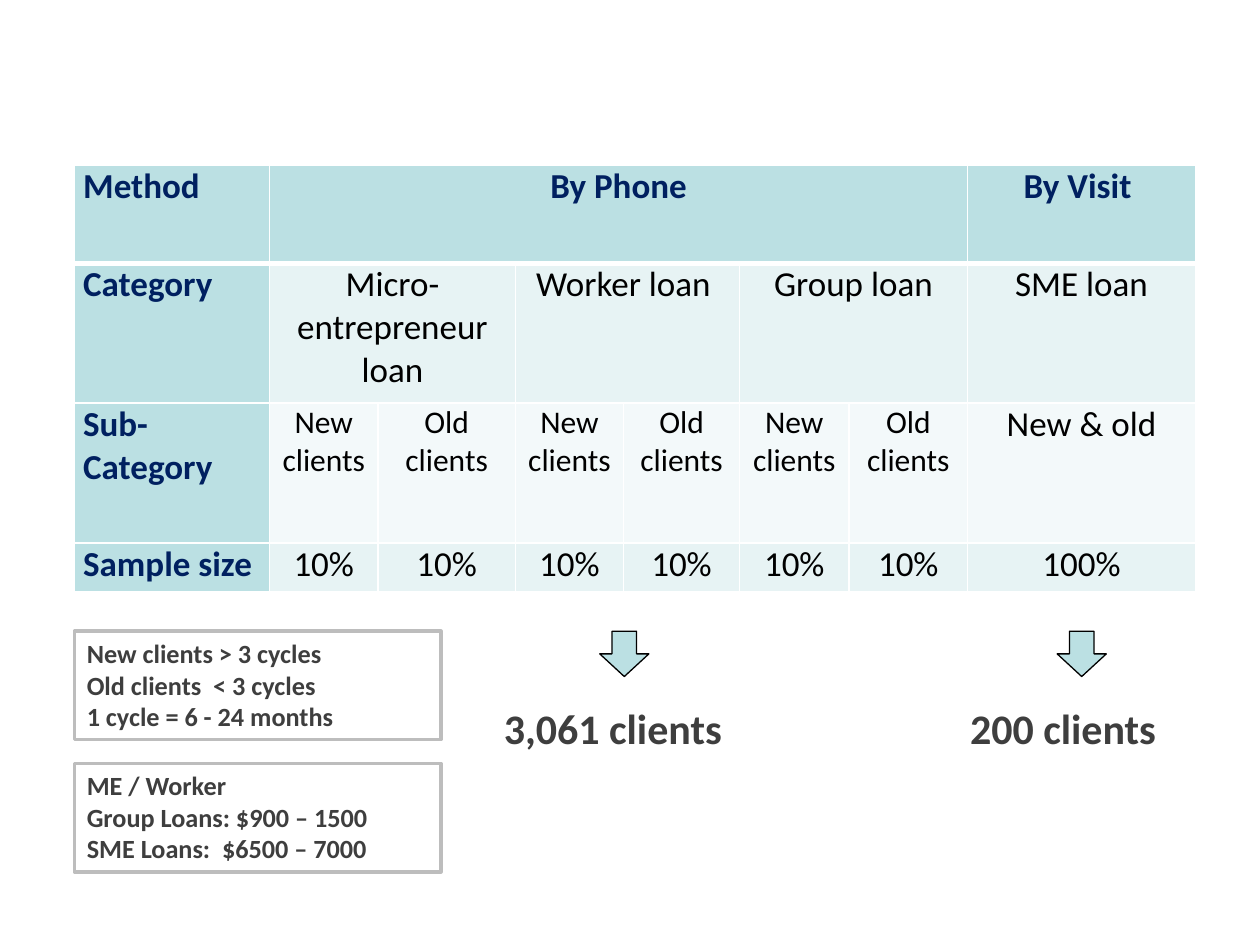
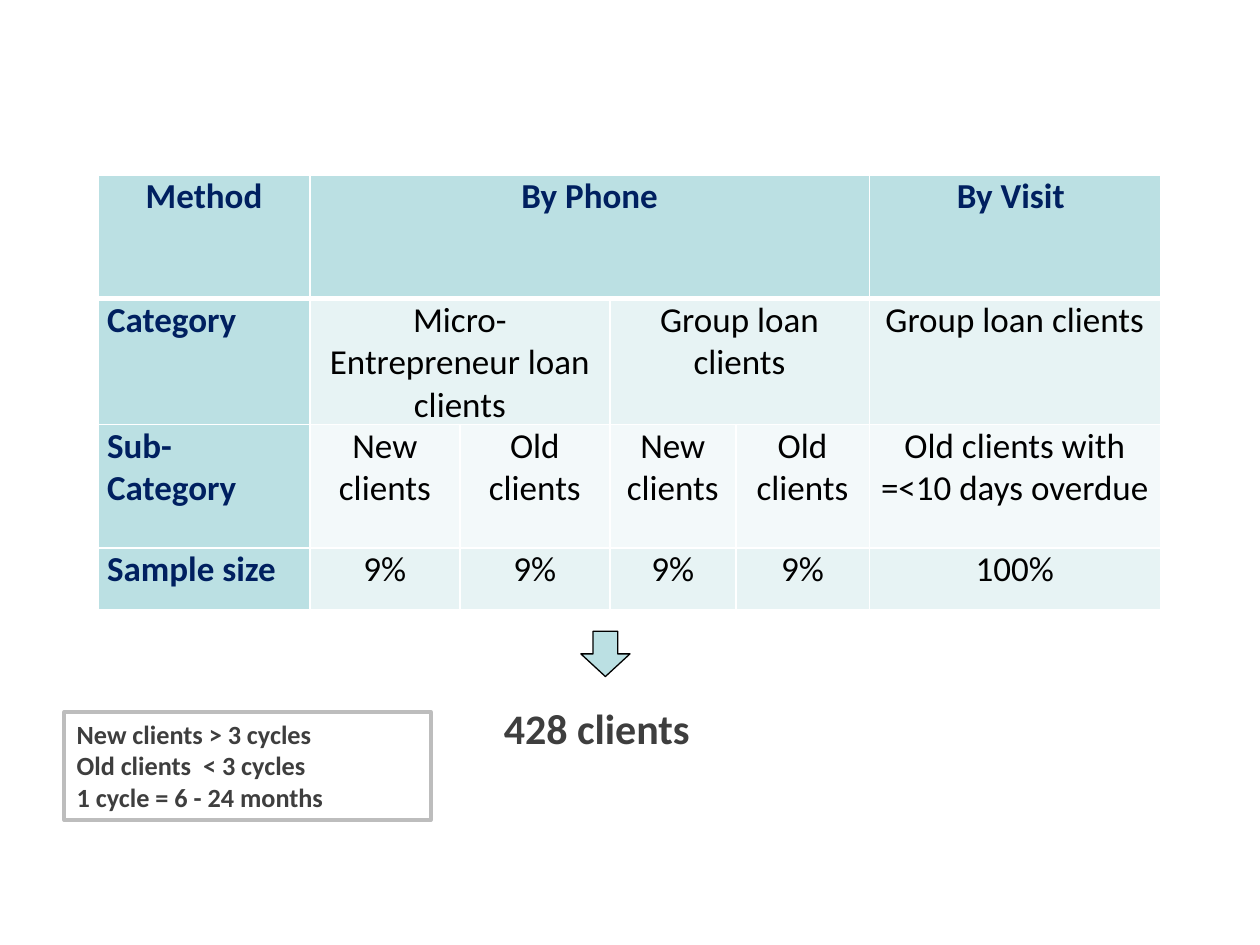
from dataclasses import dataclass

from lxml import etree
from pptx import Presentation
from pptx.dml.color import RGBColor
from pptx.enum.shapes import MSO_SHAPE
from pptx.enum.text import MSO_ANCHOR, MSO_AUTO_SIZE, PP_ALIGN
from pptx.oxml.ns import qn
from pptx.util import Inches, Pt

RECTANGLE, DOWN_ARROW = MSO_SHAPE.RECTANGLE, MSO_SHAPE.DOWN_ARROW
LEFT, CENTER = PP_ALIGN.LEFT, PP_ALIGN.CENTER
TOP = MSO_ANCHOR.TOP
GROW = MSO_AUTO_SIZE.SHAPE_TO_FIT_TEXT

# Shared colours and font formats
WHITE = RGBColor(0xFF, 0xFF, 0xFF)
BLACK = RGBColor(0, 0, 0)
NAVY = RGBColor(0x00, 0x20, 0x60)
AQUA = RGBColor(0xBB, 0xE0, 0xE3)
PALE_AQUA = RGBColor(0xE7, 0xF3, 0xF4)
FAINT_AQUA = RGBColor(0xF3, 0xF9, 0xFA)
DARK_GRAY = RGBColor(0x3E, 0x3E, 0x3E)
BORDER_GRAY = RGBColor(0xBD, 0xBD, 0xBD)

FONT = "Calibri"
HEADING = {"name": FONT, "size": Pt(20), "bold": True, "color": NAVY}
BODY = {"name": FONT, "size": Pt(20), "bold": False, "color": BLACK}
SMALL_BODY = BODY | {"size": Pt(18)}
NOTE = {"name": FONT, "size": Pt(15), "bold": True, "color": DARK_GRAY}
TOTAL = NOTE | {"size": Pt(24)}

CELL_MARGINS = {"margin_left": Inches(0.07), "margin_right": Inches(0.07),
                "margin_top": 0, "margin_bottom": 0, "vertical_anchor": TOP}
ROW_FILLS = (AQUA, PALE_AQUA, FAINT_AQUA, PALE_AQUA)
ARROW_TOP, TOTAL_TOP = 5.01, 5.53

CYCLE_LINES = ("New clients > 3 cycles", "Old clients  < 3 cycles", "1 cycle = 6 - 24 months")
LOAN_LINES = ("ME / Worker", "Group Loans: $900 – 1500", "SME Loans:  $6500 – 7000")


@dataclass(frozen=True)
class Entry:
    text: str
    span: int = 1
    style: dict | None = None


@dataclass(frozen=True)
class SampleTable:
    left: float
    top: float
    columns: tuple[float, ...]
    rows: tuple[float, ...]
    entries: tuple[tuple[Entry, ...], ...]
    method_alignment: PP_ALIGN


@dataclass(frozen=True)
class Total:
    text: str
    left: float
    width: float
    arrow_left: float
    wrap: bool = True


@dataclass(frozen=True)
class Note:
    left: float
    top: float
    lines: tuple[str, ...]


@dataclass(frozen=True)
class SampleSlide:
    table: SampleTable
    totals: tuple[Total, ...]
    notes: tuple[Note, ...]


def client_pairs(count: int, style: dict) -> tuple[Entry, ...]:
    return (Entry("New clients", style=style), Entry("Old clients", style=style)) * count


PHONE_AND_VISIT = SampleTable(
    0.59, 1.31, (1.55, 0.86, 1.09, 0.86, 0.92, 0.87, 0.94, 1.81), (0.78, 1.11, 1.11, 0.39),
    (
        (Entry("Method"), Entry("By Phone", 6), Entry("By Visit ")),
        (Entry("Category"), Entry("Micro-entrepreneur loan", 2), Entry("Worker loan ", 2),
         Entry("Group loan", 2), Entry("SME loan")),
        (Entry("Sub-Category"), *client_pairs(3, SMALL_BODY), Entry("New & old")),
        (Entry("Sample size"), *(Entry("10%"),) * 6, Entry("100%")),
    ), LEFT)

OVERDUE_VISITS = SampleTable(
    0.78, 1.39, (1.68, 1.19, 1.19, 1, 1.06, 2.31), (0.98, 1, 0.98, 0.49),
    (
        (Entry("Method"), Entry("By Phone", 4), Entry("By Visit ")),
        (Entry("Category"), Entry("Micro-Entrepreneur loan clients", 2),
         Entry("Group loan clients", 2), Entry("Group loan clients")),
        (Entry("Sub-Category"), *client_pairs(2, BODY), Entry("Old clients with =<10 days overdue")),
        (Entry("Sample size"), *(Entry("9%"),) * 4, Entry("100%")),
    ), CENTER)

SLIDES = (
    SampleSlide(PHONE_AND_VISIT,
                (Total("3,061 clients", 3.9, 2.28, 4.76),
                 Total("200 clients", 7.6, 1.92, 8.39, wrap=False)),
                (Note(0.59, 5.01, CYCLE_LINES), Note(0.59, 6.06, LOAN_LINES))),
    SampleSlide(OVERDUE_VISITS,
                (Total("428 clients", 3.9, 2.28, 4.61),),
                (Note(0.51, 5.65, CYCLE_LINES),)),
)


def write_text(text_frame, lines: tuple[str, ...], style: dict, alignment: PP_ALIGN) -> None:
    for index, line in enumerate(lines):
        paragraph = text_frame.paragraphs[0] if index == 0 else text_frame.add_paragraph()
        paragraph.alignment = alignment
        run = paragraph.add_run()
        run.text = line
        for name, value in style.items():
            if name == "color":
                run.font.color.rgb = value
            else:
                setattr(run.font, name, value)


def set_borders(cell, row: int) -> None:
    """White grid lines, thicker below the header row."""
    properties = cell._tc.get_or_add_tcPr()
    widths = {"lnL": 1, "lnR": 1, "lnT": 3 if row == 1 else 1, "lnB": 3 if row == 0 else 1}
    for tag, width in widths.items():
        line = etree.SubElement(properties, qn(f"a:{tag}"), w=str(Pt(width)))
        fill = etree.SubElement(line, qn("a:solidFill"))
        etree.SubElement(fill, qn("a:srgbClr"), val=str(WHITE))


def add_sample_table(slide, table_data: SampleTable) -> None:
    columns, rows = table_data.columns, table_data.rows
    table = slide.shapes.add_table(
        len(rows), len(columns), Inches(table_data.left), Inches(table_data.top),
        Inches(sum(columns)), Inches(sum(rows))).table
    table.first_row = table.horz_banding = False
    for column, width in zip(table.columns, columns):
        column.width = Inches(width)
    for row, height in zip(table.rows, rows):
        row.height = Inches(height)

    # Every grid cell gets its margins, borders and fill
    for row in range(len(rows)):
        for column in range(len(columns)):
            cell = table.cell(row, column)
            for name, value in CELL_MARGINS.items():
                setattr(cell, name, value)
            set_borders(cell, row)
            cell.fill.solid()
            cell.fill.fore_color.rgb = AQUA if column == 0 else ROW_FILLS[row]

    # Merge and write the entries from left to right
    for row, entries in enumerate(table_data.entries):
        column = 0
        for entry in entries:
            cell = table.cell(row, column)
            if entry.span > 1:
                cell.merge(table.cell(row, column + entry.span - 1))
            heading = row == 0 or column == 0
            alignment = CENTER
            if column == 0:
                alignment = table_data.method_alignment if row == 0 else LEFT
            style = HEADING if heading else entry.style or BODY
            write_text(cell.text_frame, (entry.text,), style, alignment)
            column += entry.span


def add_plain_shape(slide, kind: MSO_SHAPE, left: float, top: float, width: float,
                    height: float, fill: RGBColor, line: RGBColor, line_width: float):
    shape = slide.shapes.add_shape(kind, Inches(left), Inches(top), Inches(width), Inches(height))
    shape.shadow.inherit = False
    shape.fill.solid()
    shape.fill.fore_color.rgb = fill
    shape.line.color.rgb = line
    shape.line.width = Pt(line_width)
    return shape


def add_total(slide, total: Total) -> None:
    add_plain_shape(slide, DOWN_ARROW, total.arrow_left, ARROW_TOP, 0.39, 0.36, AQUA, BLACK, 0.75)
    text_box = slide.shapes.add_textbox(
        Inches(total.left), Inches(TOTAL_TOP), Inches(total.width), Inches(0.5))
    text_frame = text_box.text_frame
    text_frame.word_wrap = total.wrap
    text_frame.auto_size = GROW
    write_text(text_frame, (total.text,), TOTAL, LEFT)


def add_note(slide, note: Note) -> None:
    shape = add_plain_shape(slide, RECTANGLE, note.left, note.top, 2.91, 0.86, WHITE, BORDER_GRAY, 2)
    text_frame = shape.text_frame
    text_frame.word_wrap = True
    text_frame.auto_size = GROW
    text_frame.vertical_anchor = TOP
    write_text(text_frame, note.lines, NOTE, LEFT)


def main() -> None:
    presentation = Presentation()
    presentation.slide_width, presentation.slide_height = Inches(10), Inches(7.5)
    blank_layout = presentation.slide_layouts[6]
    for sample in SLIDES:
        slide = presentation.slides.add_slide(blank_layout)
        add_sample_table(slide, sample.table)
        for total in sample.totals:
            add_total(slide, total)
        for note in sample.notes:
            add_note(slide, note)
    presentation.save("out.pptx")


if __name__ == "__main__":
    main()
